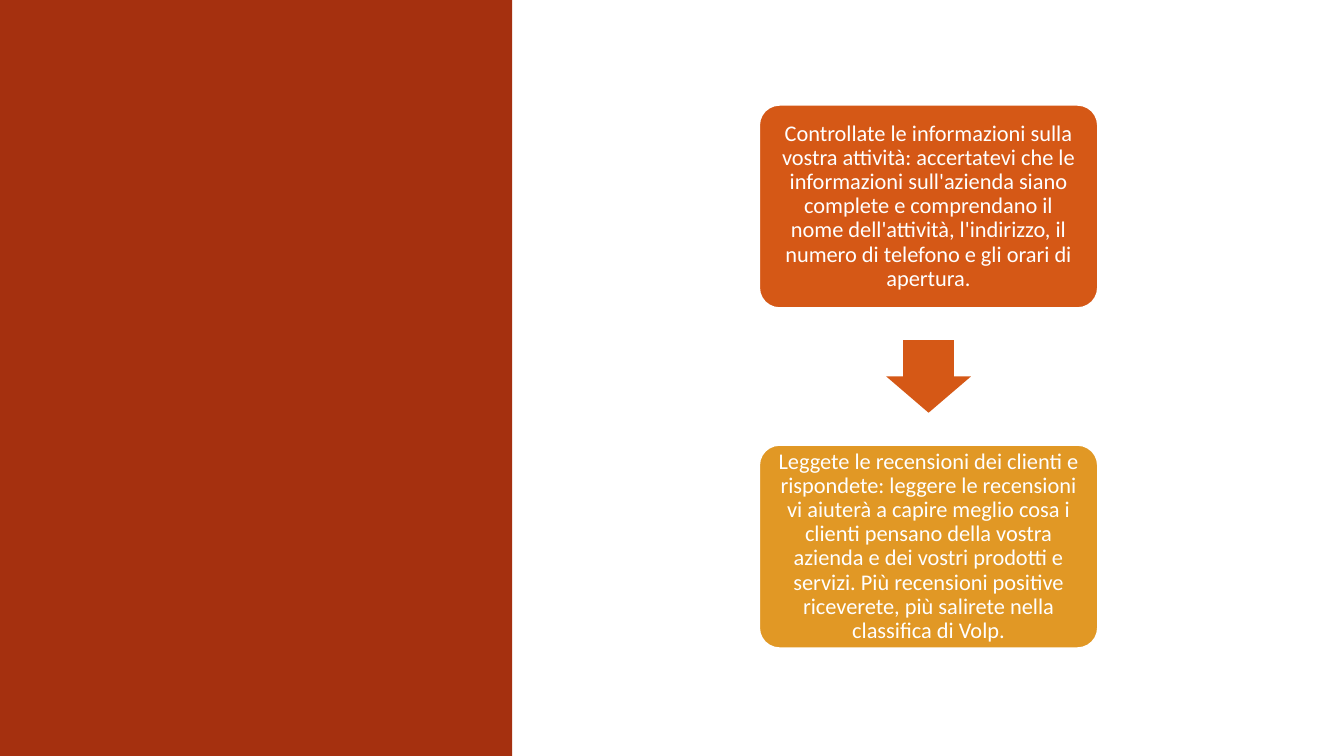
from pptx import Presentation
from pptx.dml.color import RGBColor
from pptx.enum.shapes import MSO_SHAPE as Shape
from pptx.enum.text import MSO_ANCHOR as Anchor, PP_ALIGN as Align
from pptx.util import Inches, Pt

WIDTH, HEIGHT = 13.33, 7.5
COLORS = {"panel": "A5300F", "check": "D55816", "reviews": "E19825", "white": "FFFFFF"}
STEPS = [
    ("check", "Controllate le informazioni sulla vostra attività: accertatevi che le "
     "informazioni sull'azienda siano complete e comprendano il nome dell'attività, "
     "l'indirizzo, il numero di telefono e gli orari di apertura."),
    ("reviews", "Leggete le recensioni dei clienti e rispondete: leggere le recensioni "
     "vi aiuterà a capire meglio cosa i clienti pensano della vostra azienda e dei "
     "vostri prodotti e servizi. Più recensioni positive riceverete, più salirete "
     "nella classifica di Volp."),
]


def add_filled(page, kind, box, color):
    shape = page.shapes.add_shape(kind, *(Inches(length) for length in box))
    shape.shadow.inherit = False
    shape.fill.solid()
    shape.fill.fore_color.rgb = RGBColor.from_string(COLORS[color])
    shape.line.fill.background()
    return shape


def add_step(page, box, color, text):
    card = add_filled(page, Shape.ROUNDED_RECTANGLE, box, color)
    card.adjustments[0] = 0.1
    card.line.color.rgb = RGBColor.from_string(COLORS["white"])
    card.line.width = Pt(1.25)
    frame = card.text_frame
    frame.word_wrap = True
    frame.vertical_anchor = Anchor.MIDDLE
    frame.margin_left = frame.margin_right = Inches(0.13)
    frame.margin_top = frame.margin_bottom = Inches(0.13)
    frame.text = text
    para = frame.paragraphs[0]
    para.alignment = Align.CENTER
    para.line_spacing = 0.9
    font = para.runs[0].font
    font.name = "Calibri"
    font.size = Pt(16)
    font.color.rgb = RGBColor.from_string(COLORS["white"])


def add_arrow(page, box, color):
    """Centre a down arrow in the gap between two steps."""
    left, top, width, height = box
    arrow_width, arrow_height = width / 4, height * 0.53
    arrow = add_filled(page, Shape.DOWN_ARROW,
                       (left + (width - arrow_width) / 2,
                        top + (height - arrow_height) / 2,
                        arrow_width, arrow_height), color)
    arrow.adjustments[0] = 0.6
    arrow.adjustments[1] = 0.5


def add_process(page, box):
    """Stack the steps at 60% of the box height per pitch, with arrows between."""
    left, top, width, height = box
    card_height = width * 0.6
    pitch = (height - card_height) / (len(STEPS) - 1)
    for index, (color, text) in enumerate(STEPS):
        card_top = top + index * pitch
        add_step(page, (left, card_top, width, card_height), color, text)
        if index < len(STEPS) - 1:
            gap_top = card_top + card_height
            add_arrow(page, (left, gap_top, width, pitch - card_height), color)


def main():
    deck = Presentation()
    deck.slide_width, deck.slide_height = Inches(WIDTH), Inches(HEIGHT)
    page = deck.slides.add_slide(deck.slide_layouts[6])
    add_filled(page, Shape.RECTANGLE, (0, 0, 5.08, HEIGHT), "panel")
    add_process(page, (7.53, 1.04, 3.36, 5.39))
    deck.save("out.pptx")


if __name__ == "__main__":
    main()
